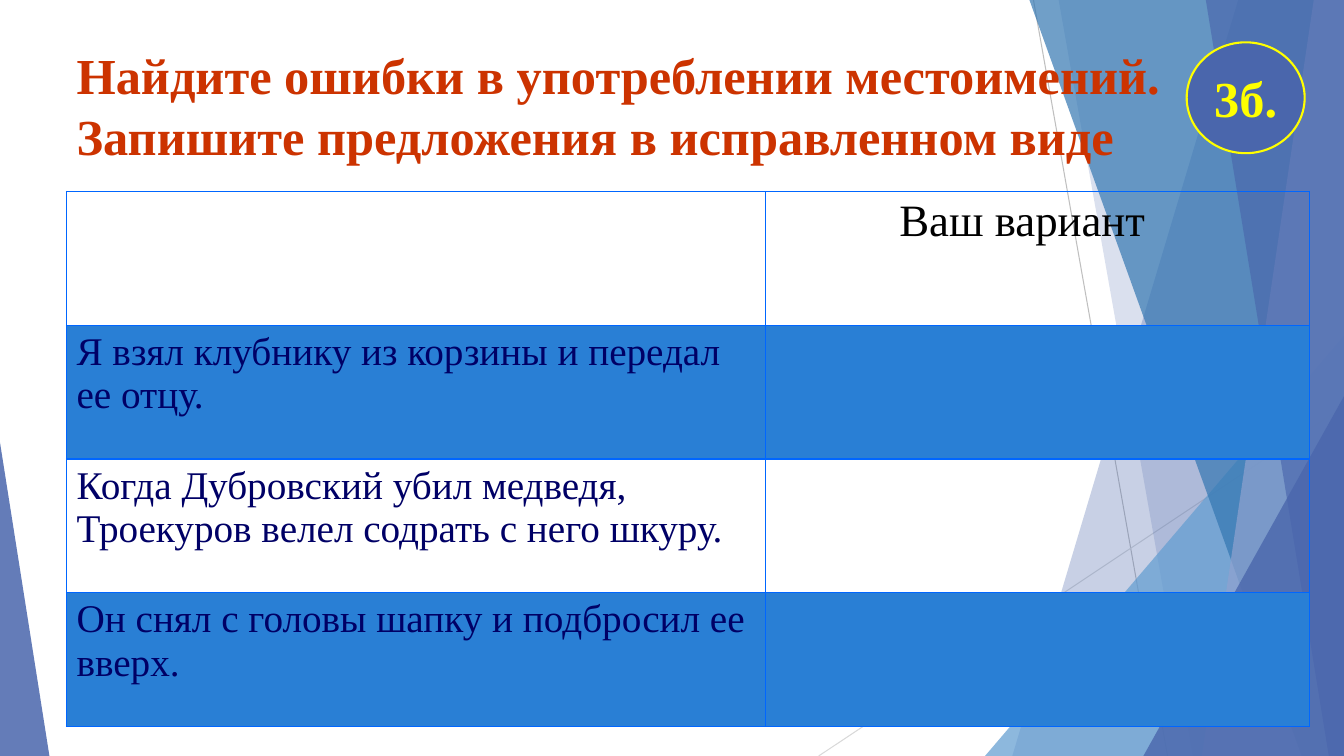
import pptx
import pptx.util
import pptx.dml.color
import pptx.enum.shapes
import pptx.enum.text
import pptx.oxml
import pptx.oxml.ns
from lxml import etree

Inches = pptx.util.Inches
Pt = pptx.util.Pt
RGBColor = pptx.dml.color.RGBColor
MSO_SHAPE = pptx.enum.shapes.MSO_SHAPE
qn = pptx.oxml.ns.qn

COLORS = {
    "indigo": "4A66AC", "sky": "629DD1", "steel": "3477B2", "lavender": "90A2CF",
    "gray": "BFBFBF", "light gray": "D9D9D9", "band": "297FD5", "border": "0066FF",
    "title": "CC3300", "sentence": "000066", "black": "000000", "yellow": "FFFF00",
}
WIDTH, HEIGHT = 13.33, 7.5


def fill_color(fill, color, opacity=100):
    fill.solid()
    fill.fore_color.rgb = RGBColor.from_string(COLORS[color])
    if opacity < 100:
        rgb = next(fill._xPr.iter(qn("a:srgbClr")))
        etree.SubElement(rgb, qn("a:alpha"), val=str(opacity * 1000))


def write_text(text_frame, text, color, size, bold=False, alignment=pptx.enum.text.PP_ALIGN.LEFT):
    text_frame.word_wrap = True
    paragraph = text_frame.paragraphs[0]
    paragraph.alignment = alignment
    run = paragraph.add_run()
    run.text = text
    run.font.color.rgb = RGBColor.from_string(COLORS[color])
    for name, value in {"name": "Times New Roman", "size": Pt(size), "bold": bold}.items():
        setattr(run.font, name, value)


presentation = pptx.Presentation()
presentation.slide_width = Inches(WIDTH)
presentation.slide_height = Inches(HEIGHT)
slide = presentation.slides.add_slide(presentation.slide_layouts[5])
shapes = slide.shapes

# Thin background lines
for color, x1, y1, x2, y2 in [
    ("gray", 10.25, 0, 11.58, HEIGHT),
    ("light gray", WIDTH, 4.03, 8.12, HEIGHT),
]:
    line = shapes.add_connector(
        pptx.enum.shapes.MSO_CONNECTOR.STRAIGHT, Inches(x1), Inches(y1), Inches(x2), Inches(y2))
    line.line.color.rgb = RGBColor.from_string(COLORS[color])
    line.line.width = Pt(0.75)
    etree.SubElement(line.element.spPr, qn("a:effectLst"))

# Facets: bands (top x, bottom x) reach the right edge, triangles (left, top, width, apex) the bottom
facets = [
    ("indigo", 30, (12.28, 10.04)),
    ("indigo", 20, (10.5, 11.83)),
    ("sky", 72, (9.77, 3.33, 3.56, 1)),
    ("steel", 70, (10.21, 12.91)),
    ("lavender", 70, (13.03, 11.92)),
    ("indigo", 65, (11.96, 13.18)),
    ("indigo", 80, (11.34, 3.93, 1.99, 1)),
    ("indigo", 85, (0, 4.39, 0.49, 0)),
]
for color, opacity, geometry in facets:
    if len(geometry) == 2:
        top_x, bottom_x = geometry
        builder = shapes.build_freeform(Inches(top_x), 0)
        corners = [(WIDTH, 0), (WIDTH, HEIGHT), (bottom_x, HEIGHT)]
        builder.add_line_segments([(Inches(x), Inches(y)) for x, y in corners])
        facet = builder.convert_to_shape()
    else:
        left, top, width, apex = geometry
        facet = shapes.add_shape(
            MSO_SHAPE.ISOSCELES_TRIANGLE, Inches(left), Inches(top), Inches(width), Inches(HEIGHT - top))
        facet.adjustments[0] = apex
    fill_color(facet.fill, color, opacity)
    facet.line.fill.background()
    facet.shadow.inherit = False

# Title, raised above the facets
title = shapes.title
title.left, title.top, title.width, title.height = map(Inches, (0.66, 0.32, 12.33, 1.44))
title.element.getparent().append(title.element)
title.text_frame.vertical_anchor = pptx.enum.text.MSO_ANCHOR.MIDDLE
write_text(
    title.text_frame,
    "Найдите ошибки в употреблении местоимений. Запишите предложения в исправленном виде",
    "title", 36, True)

# Table of sentences with an empty answer column
sentences = [
    "Я взял клубнику из корзины и передал ее отцу.",
    "Когда Дубровский убил медведя, Троекуров велел содрать с него шкуру.",
    "Он снял с головы шапку и подбросил ее вверх.",
]
table = shapes.add_table(
    len(sentences) + 1, 2, Inches(0.66), Inches(1.9), Inches(12.33), Inches(5.31)).table
table.first_row = table.horz_banding = False
for column, width in zip(table.columns, (6.93, 5.4)):
    column.width = Inches(width)

for row_index in range(len(table.rows)):
    for cell in table.rows[row_index].cells:
        properties = cell._tc.get_or_add_tcPr()
        for side in ("lnL", "lnR", "lnT", "lnB"):
            border = etree.SubElement(properties, qn(f"a:{side}"), w=str(Pt(1)))
            solid = etree.SubElement(border, qn("a:solidFill"))
            etree.SubElement(solid, qn("a:srgbClr"), val=COLORS["border"])
        if row_index % 2:
            fill_color(cell.fill, "band", 20)
        else:
            cell.fill.background()

answer_header = table.cell(0, 1)
answer_header.margin_left = Inches(1.33)
write_text(answer_header.text_frame, "Ваш вариант", "black", 32)
for row_index, sentence in enumerate(sentences, start=1):
    write_text(table.cell(row_index, 0).text_frame, sentence, "sentence", 28)

# Score badge
badge = shapes.add_shape(MSO_SHAPE.OVAL, Inches(11.77), Inches(0.42), Inches(1.17), Inches(1.1))
badge.shadow.inherit = False
fill_color(badge.fill, "indigo")
badge.line.color.rgb = RGBColor.from_string(COLORS["yellow"])
badge.line.width = Pt(1.5)
badge.text_frame.margin_left = badge.text_frame.margin_right = 0
badge.text_frame.vertical_anchor = pptx.enum.text.MSO_ANCHOR.MIDDLE
write_text(badge.text_frame, "3б.", "yellow", 36, True, pptx.enum.text.PP_ALIGN.CENTER)

presentation.save("out.pptx")
